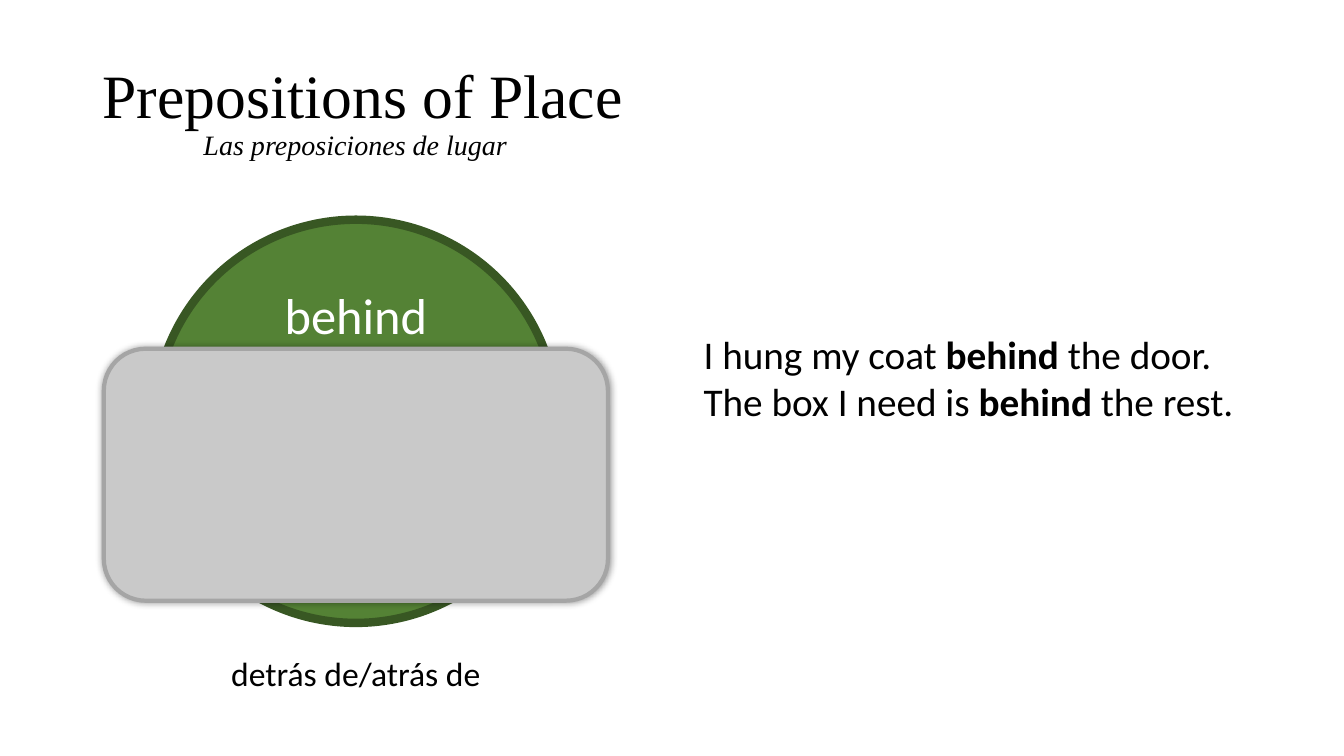
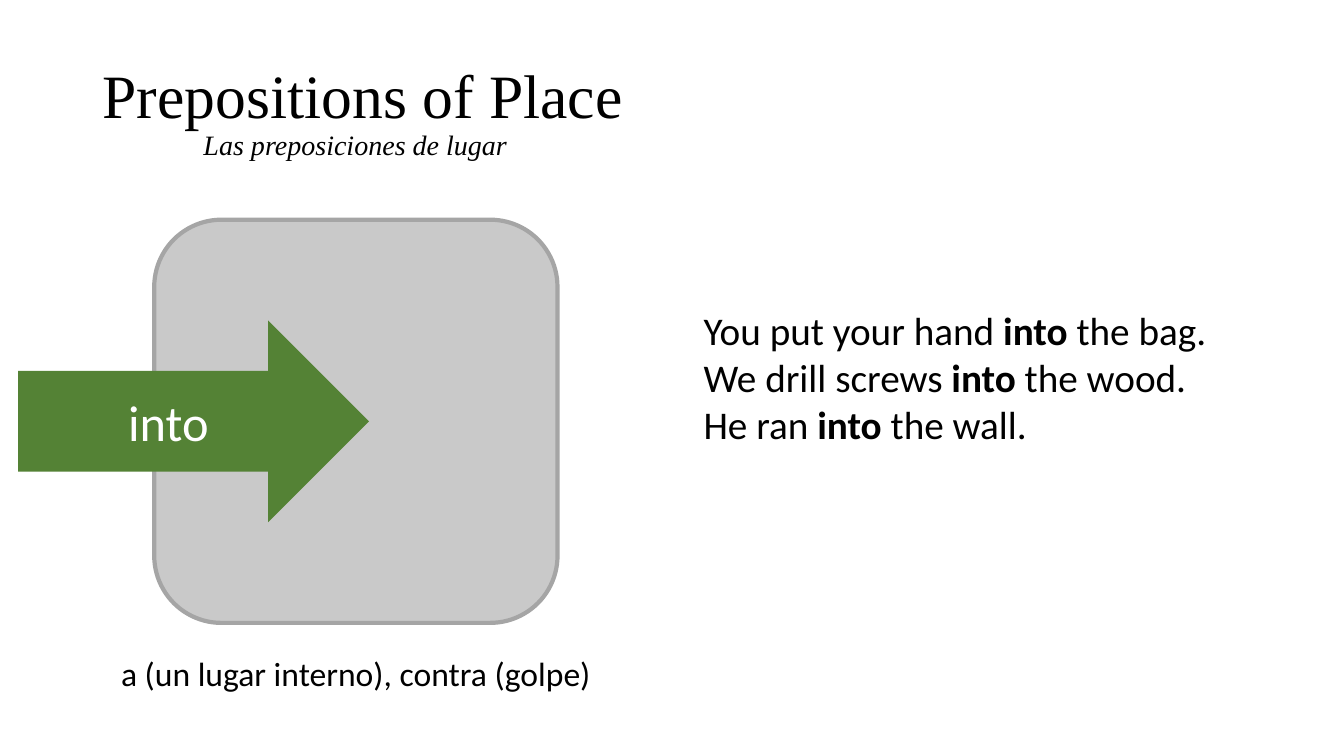
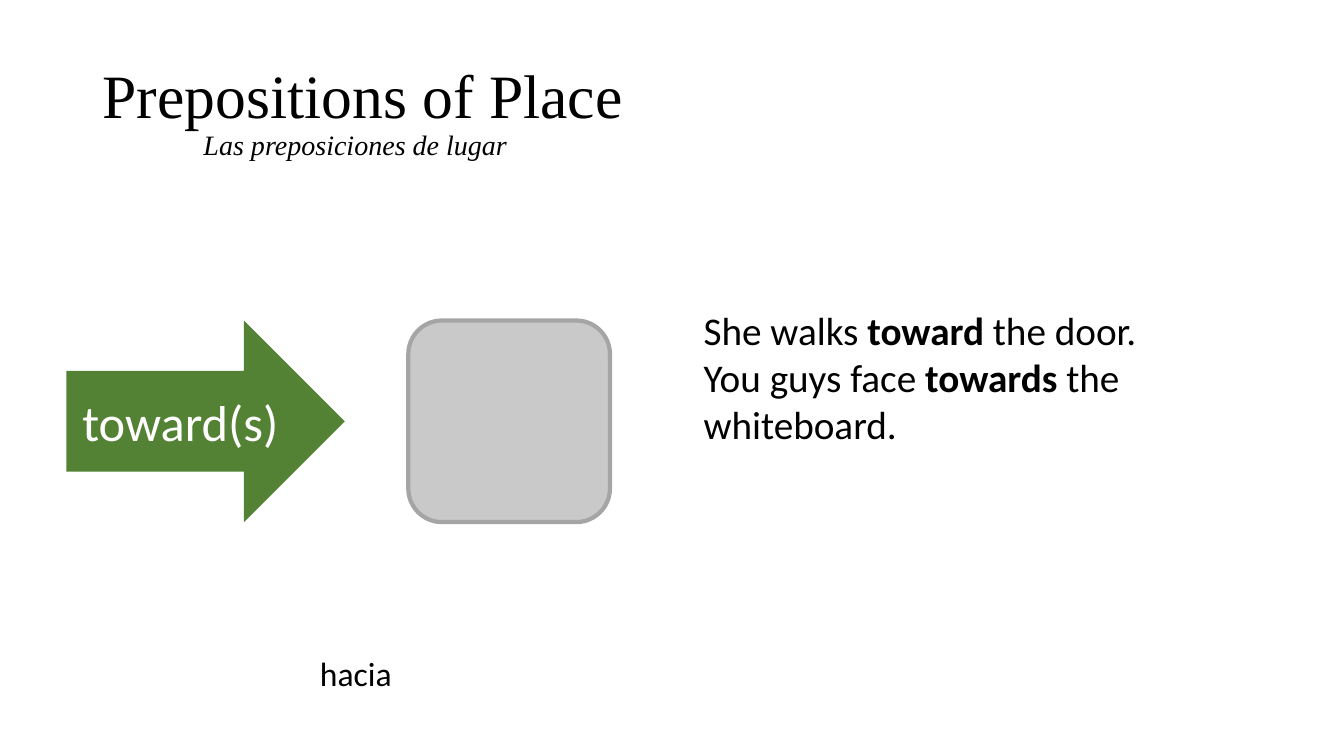
from lxml import etree
from pptx import Presentation
from pptx import util as u
from pptx.dml.color import RGBColor
from pptx.enum import shapes, text
from pptx.oxml.ns import qn

PX = 9144
CENTER_X, CENTER_Y = 353, 418
COLORS = {"ink": "000000", "white": "FFFFFF", "green": "548235",
          "dark_green": "385723", "gray": "C9C9C9", "edge": "A5A5A5"}
SHAPE = shapes.MSO_SHAPE
ALIGN = text.PP_ALIGN
ANCHOR = text.MSO_ANCHOR


class Deck:
    """Holds the lesson style and the current slide."""

    def __init__(self):
        self.presentation = Presentation()
        self.presentation.slide_width = u.Emu(1333 * PX)
        self.presentation.slide_height = u.Emu(750 * PX)
        self.slide = None

    def color(self, name):
        return RGBColor.from_string(COLORS[name])

    def box(self, *lengths):
        return [u.Emu(length * PX) for length in lengths]

    def style(self, paragraph, size, font="Calibri", color="ink", align=ALIGN.LEFT, italic=False):
        paragraph.alignment = align
        paragraph.font.size = u.Pt(size)
        paragraph.font.name = font
        paragraph.font.italic = italic
        paragraph.font.color.rgb = self.color(color)

    def text_box(self, left, top, width, height, lines, anchor=ANCHOR.TOP):
        frame = self.slide.shapes.add_textbox(*self.box(left, top, width, height)).text_frame
        frame.word_wrap = True
        frame.vertical_anchor = anchor
        frame.text = "\n".join(lines)
        return frame.paragraphs

    def start(self):
        self.slide = self.presentation.slides.add_slide(self.presentation.slide_layouts[6])
        title, subtitle = self.text_box(
            92, 40, 1150, 145, ["Prepositions of Place", "Las preposiciones de lugar"], ANCHOR.MIDDLE)
        self.style(title, 44, "Times New Roman")
        self.style(subtitle, 20, "Times New Roman", italic=True)
        subtitle._p.get_or_add_pPr().set("marL", str(100 * PX))
        for paragraph in (title, subtitle):
            paragraph.line_spacing = 0.9

    def shape(self, kind, left, width, height, fill, line=None, weight=3, top=None):
        if top is None:
            top = CENTER_Y - height // 2
        shape = self.slide.shapes.add_shape(kind, *self.box(left, top, width, height))
        shape.shadow.inherit = False
        shape.fill.solid()
        shape.fill.fore_color.rgb = self.color(fill)
        if line:
            shape.line.color.rgb = self.color(line)
            shape.line.width = u.Pt(weight)
        else:
            shape.line.fill.background()
        return shape

    def label(self, shape, word, anchor=ANCHOR.MIDDLE):
        frame = shape.text_frame
        frame.vertical_anchor = anchor
        frame.text = word
        self.style(frame.paragraphs[0], 36, color="white", align=ALIGN.CENTER)

    def circle(self, word):
        circle = self.shape(SHAPE.OVAL, CENTER_X - 200, 400, 400, "green", "dark_green", 6)
        self.label(circle, word, ANCHOR.TOP)

    def block(self, left, width, height, top=None):
        return self.shape(SHAPE.ROUNDED_RECTANGLE, left, width, height, "gray", "edge", top=top)

    def arrow(self, left, width, word):
        self.label(self.shape(SHAPE.RIGHT_ARROW, left, width, 200, "green"), word)

    def glow(self, shape):
        effects = shape._element.spPr.find(qn("a:effectLst"))
        shadow = etree.SubElement(effects, qn("a:outerShdw"), blurRad=str(u.Pt(5)), dist="0",
                                  algn="ctr", rotWithShape="0")
        tint = etree.SubElement(shadow, qn("a:srgbClr"), val=COLORS["ink"])
        etree.SubElement(tint, qn("a:alpha"), val="40000")

    def examples(self, top, height, lines):
        for paragraph, line in zip(self.text_box(688, top, 553, height, lines), lines):
            paragraph.clear()
            for index, part in enumerate(line.split("*")):
                run = paragraph.add_run()
                run.text = part
                if index % 2:
                    run.font.bold = True
            self.style(paragraph, 28)

    def caption(self, translation):
        paragraph, = self.text_box(CENTER_X - 260, 643, 520, 50, [translation])
        self.style(paragraph, 24, align=ALIGN.CENTER)


def main():
    deck = Deck()

    deck.start()
    deck.circle("behind")
    deck.glow(deck.block(CENTER_X - 250, 500, 250, top=346))
    deck.examples(323, 104, ["I hung my coat *behind* the door.",
                             "The box I need is *behind* the rest."])
    deck.caption("detrás de/atrás de")

    deck.start()
    deck.block(CENTER_X - 200, 400, 400)
    deck.arrow(18, 348, "into")
    deck.examples(299, 151, ["You put your hand *into* the bag.",
                             "We drill screws *into* the wood.",
                             "He ran *into* the wall."])
    deck.caption("a (un lugar interno), contra (golpe)")

    deck.start()
    deck.block(405, 200, 200)
    deck.arrow(66, 276, "toward(s)")
    deck.examples(299, 151, ["She walks *toward* the door.",
                             "You guys face *towards* the whiteboard."])
    deck.caption("hacia")

    deck.presentation.save("out.pptx")


if __name__ == "__main__":
    main()
